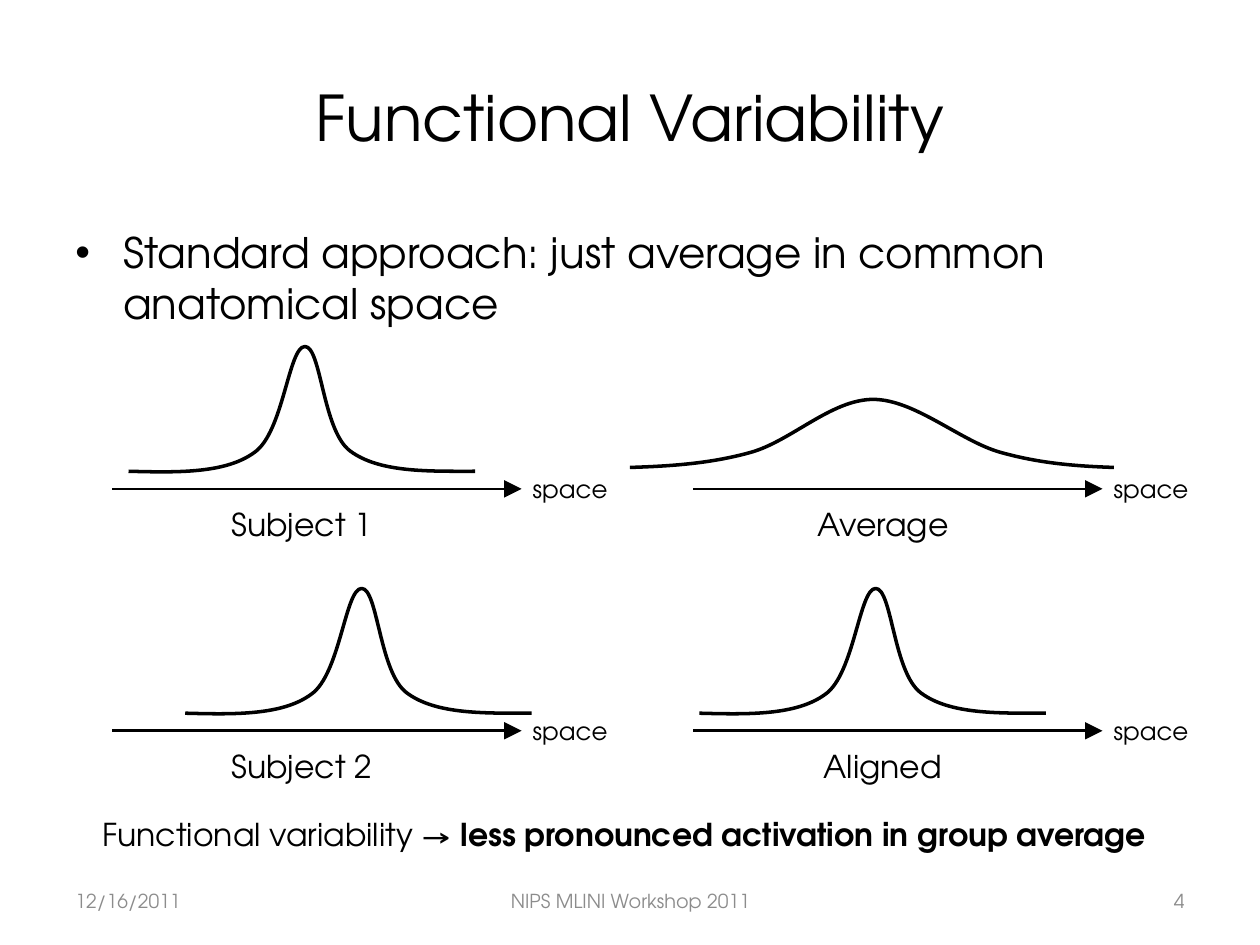
from lxml.etree import SubElement
from pptx import Presentation
from pptx.dml.color import RGBColor
from pptx.enum.shapes import MSO_CONNECTOR
from pptx.enum.text import MSO_ANCHOR, PP_ALIGN
from pptx.oxml.ns import qn
from pptx.util import Pt

PX = 9144
FONT = "TeX Gyre Adventor"
BLACK = RGBColor(0x00, 0x00, 0x00)
GRAY = RGBColor(0x8C, 0x8C, 0x8C)

NARROW_CURVE = [
    (0, 0), (38, 1), (77, 2), (100, -15), (123, -31), (127, -99), (140, -99),
    (153, -99), (154, -32), (176, -16), (199, 1), (237, 0), (275, 0),
]
WIDE_CURVE = [
    (0, 0), (32, -1), (64, -3), (96, -12), (128, -21), (160, -54), (193, -54),
    (226, -54), (262, -21), (294, -12), (326, -3), (355, -1), (384, 0),
]
PLOTS = [
    ("Subject 1", 133, 89, 388, NARROW_CURVE, 102, 374),
    ("Subject 2", 133, 89, 580, NARROW_CURVE, 147, 566),
    ("Average", 128, 550, 388, WIDE_CURVE, 500, 371),
    ("Aligned", 115, 550, 580, NARROW_CURVE, 555, 566),
]
FOOTERS = [
    ("12/16/2011", 50, 233, PP_ALIGN.LEFT),
    ("NIPS MLINI Workshop 2011", 342, 317, PP_ALIGN.CENTER),
    ("4", 717, 233, PP_ALIGN.RIGHT),
]


def add_text(shapes, text, box, size, align=PP_ALIGN.LEFT, color=BLACK,
             anchor=MSO_ANCHOR.TOP, wrap=True):
    shape = shapes.add_textbox(*(value * PX for value in box))
    frame = shape.text_frame
    frame.word_wrap = wrap
    frame.vertical_anchor = anchor
    paragraph = frame.paragraphs[0]
    paragraph.alignment = align
    paragraph.font.name = FONT
    paragraph.font.size = Pt(size)
    paragraph.font.color.rgb = color
    paragraph.add_run().text = text
    return paragraph


def add_bullet(paragraph, indent):
    paragraph.space_before = Pt(5)
    properties = paragraph._p.get_or_add_pPr()
    properties.set("marL", str(indent * PX))
    properties.set("indent", str(-indent * PX))
    font = properties.makeelement(qn("a:buFont"), {"typeface": "Arial"})
    bullet = properties.makeelement(qn("a:buChar"), {"char": "•"})
    properties.find(qn("a:spcBef")).addnext(font)
    font.addnext(bullet)


def add_axis(shapes, left, top, length):
    connector = shapes.add_connector(
        MSO_CONNECTOR.STRAIGHT, left * PX, top * PX, (left + length) * PX, top * PX)
    connector.line.color.rgb = BLACK
    connector.line.width = Pt(1.5)
    SubElement(connector.line._get_or_add_ln(), qn("a:tailEnd"),
               type="triangle", w="lg", len="lg")
    SubElement(connector._element.spPr, qn("a:effectLst"))


def bend_segments(curve, points):
    segments = list(curve._element.iter(qn("a:lnTo")))
    for index, segment in enumerate(segments):
        segment.tag = qn("a:cubicBezTo")
        handles = points[3 * index + 1:3 * index + 3]
        for position, (x, y) in enumerate(handles):
            handle = segment.makeelement(
                qn("a:pt"), {"x": str(x - curve.left), "y": str(y - curve.top)})
            segment.insert(position, handle)


def add_curve(shapes, controls, left, base):
    points = [((left + x) * PX, (base + y) * PX) for x, y in controls]
    builder = shapes.build_freeform(*points[0])
    builder.add_line_segments(points[3::3], close=False)
    curve = builder.convert_to_shape()
    bend_segments(curve, points)
    curve.shadow.inherit = False
    curve.fill.background()
    curve.line.color.rgb = BLACK
    curve.line.width = Pt(2)


def add_plot(slide, label, label_width, left, top, controls, curve_left, curve_base):
    shapes = slide.shapes.add_group_shape().shapes
    add_axis(shapes, left, top, 325)
    add_text(shapes, "space", (left + 324, top - 17, 80, 34), 14, wrap=False)
    label_left = left + 151 - (label_width + 1) // 2
    add_text(shapes, label, (label_left, top + 8, label_width, 40), 18,
             PP_ALIGN.CENTER, wrap=False)
    add_curve(shapes, controls, curve_left, curve_base)


def main():
    presentation = Presentation()
    presentation.slide_width = 1000 * PX
    presentation.slide_height = 750 * PX
    slide = presentation.slides.add_slide(presentation.slide_layouts[6])
    shapes = slide.shapes

    add_text(shapes, "Functional Variability", (50, 30, 900, 125), 36,
             PP_ALIGN.CENTER, anchor=MSO_ANCHOR.MIDDLE)
    approach = add_text(
        shapes, "Standard approach: just average in common anatomical space",
        (50, 175, 900, 495), 24)
    add_bullet(approach, 38)

    for text, left, width, align in FOOTERS:
        add_text(shapes, text, (left, 695, width, 40), 11, align, GRAY,
                 MSO_ANCHOR.MIDDLE)

    conclusion = add_text(shapes, "Functional variability → ", (69, 642, 853, 40),
                          18, PP_ALIGN.CENTER, wrap=False)
    emphasis = conclusion.add_run()
    emphasis.text = "less pronounced activation in group average"
    emphasis.font.bold = True

    for plot in PLOTS:
        add_plot(slide, *plot)

    presentation.save("out.pptx")


if __name__ == "__main__":
    main()
